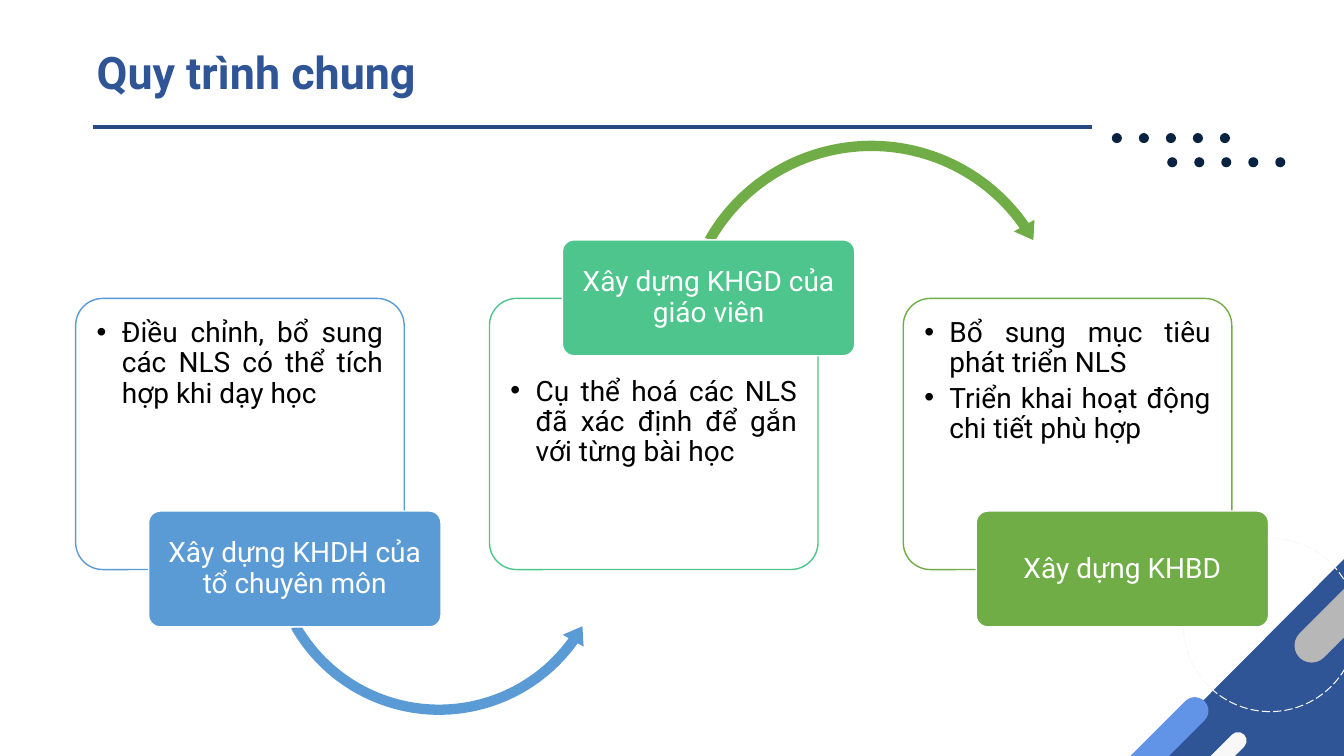
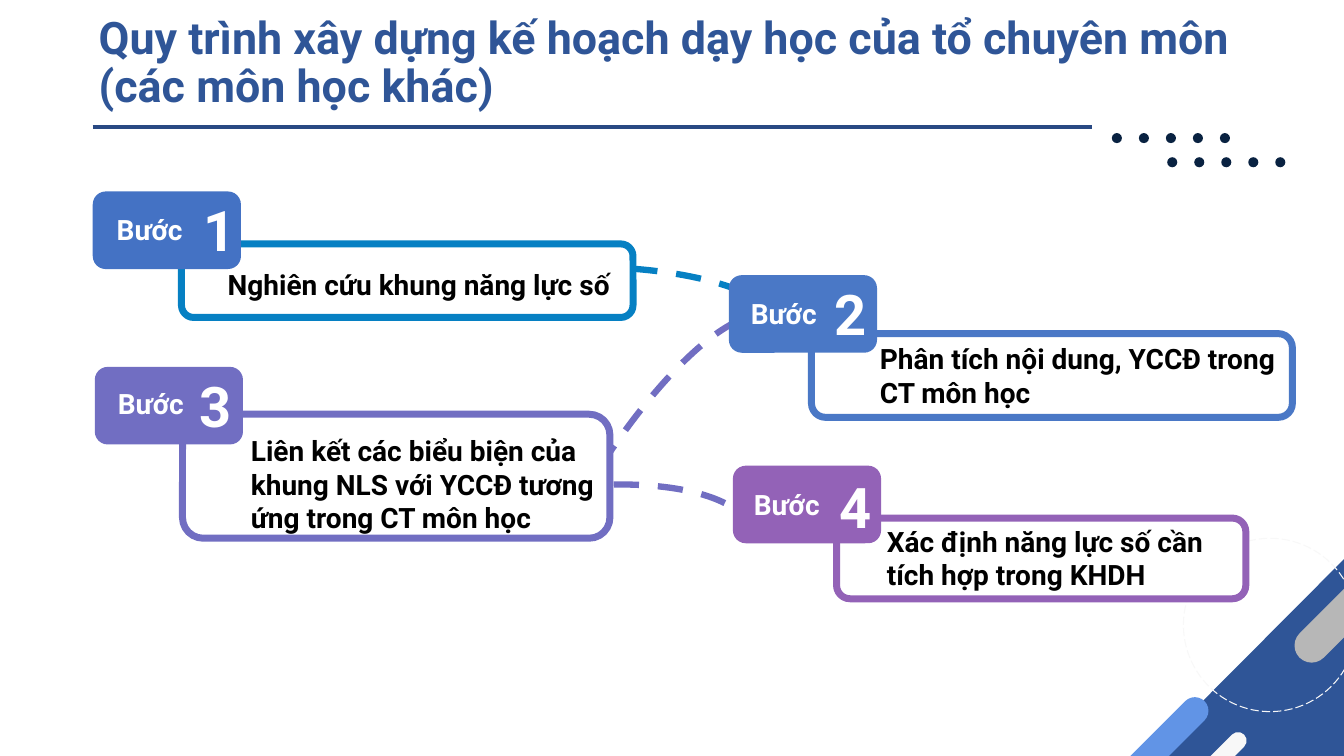
from pptx import Presentation
from pptx.dml.color import RGBColor
from pptx.enum.dml import MSO_LINE
from pptx.enum.shapes import MSO_CONNECTOR, MSO_SHAPE
from pptx.enum.text import MSO_ANCHOR, PP_ALIGN
from pptx.oxml.ns import qn
from pptx.util import Inches, Pt
from lxml import etree

ROUND, OVAL, ARC = MSO_SHAPE.ROUNDED_RECTANGLE, MSO_SHAPE.OVAL, MSO_SHAPE.ARC
TRIANGLE = MSO_SHAPE.RIGHT_TRIANGLE
ARROW_UNDER, ARROW_OVER = MSO_SHAPE.LEFT_CIRCULAR_ARROW, MSO_SHAPE.CIRCULAR_ARROW
DASH, LONG_DASH = MSO_LINE.DASH, MSO_LINE.LONG_DASH
TOP, MIDDLE = MSO_ANCHOR.TOP, MSO_ANCHOR.MIDDLE
LEFT, CENTER, JUSTIFY = PP_ALIGN.LEFT, PP_ALIGN.CENTER, PP_ALIGN.JUSTIFY

FONT = "Roboto"
NAVY, RULE, DOT, OFF_WHITE = "2F5597", "294983", "092241", "F8F8F8"
WHITE, BLACK = "FFFFFF", "000000"
BLUE, MINT, GREEN = "5B9BD5", "4DC58D", "70AD47"
CYAN, ROYAL, INDIGO, PURPLE = "0680C3", "4A78C6", "716EC2", "9362B7"

deck = Presentation()
deck.slide_width, deck.slide_height = Inches(13.333), Inches(7.5)
# Grid of 100 columns and 100 rows; every box is (column, row, columns, rows)
COL, ROW = deck.slide_width / 100, deck.slide_height / 100


def draw(slide, kind, box, fill=None, line=None, width=1, dash=None, turn=0, adjust=()):
    """Place a preset shape, or a text box when kind is None."""
    x, y, w, h = box
    area = [round(n) for n in (x * COL, y * ROW, w * COL, h * ROW)]
    if kind is None:
        return slide.shapes.add_textbox(*area)
    shape = slide.shapes.add_shape(kind, *area)
    shape.shadow.inherit = False
    shape.rotation = turn
    for index, value in enumerate(adjust):
        shape.adjustments[index] = value
    if fill:
        shape.fill.solid()
        shape.fill.fore_color.rgb = RGBColor.from_string(fill)
    else:
        shape.fill.background()
    if line:
        shape.line.color.rgb = RGBColor.from_string(line)
        shape.line.width = Pt(width)
        shape.line.dash_style = dash
    else:
        shape.line.fill.background()
    return shape


def write(shape, lines, color, size=20, bold=False, align=LEFT, anchor=TOP,
          spacing=1.0, after=0, bullet=False, wrap=True, margins=(0.1, 0.05, 0.1, 0.05)):
    """Fill a shape with paragraphs; margins are left, top, right, bottom in inches."""
    frame = shape.text_frame
    frame.word_wrap, frame.vertical_anchor = wrap, anchor
    for side, margin in zip(("left", "top", "right", "bottom"), margins):
        setattr(frame, f"margin_{side}", Inches(margin))
    frame.text = "\n".join(lines)
    font_format = {"name": FONT, "size": Pt(size), "bold": bold}
    paragraph_format = {"alignment": align, "line_spacing": spacing, "space_after": Pt(after)}
    for paragraph in frame.paragraphs:
        for key, value in paragraph_format.items():
            setattr(paragraph, key, value)
        if bullet:
            props = paragraph._p.get_or_add_pPr()
            props.set("marL", str(Inches(0.25)))
            props.set("indent", str(-Inches(0.25)))
            etree.SubElement(props, qn("a:buFont")).set("typeface", "Arial")
            etree.SubElement(props, qn("a:buChar")).set("char", "•")
        for run in paragraph.runs:
            for key, value in font_format.items():
                setattr(run.font, key, value)
            run.font.color.rgb = RGBColor.from_string(color)


# Shared frame: corner ornament, dots, rule and title
corner = [
    dict(kind=TRIANGLE, box=(84.9, 73.73, 15.3, 27.07), fill=NAVY, turn=270),
    dict(kind=ROUND, box=(95.03, 77.6, 11.33, 4.53), fill="B7B7B7", turn=135, adjust=[0.5]),
    dict(kind=OVAL, box=(88.05, 71.2, 12.9, 22.93), line=OFF_WHITE, width=0.75,
         dash=LONG_DASH, turn=180),
    dict(kind=ROUND, box=(80.4, 97.73, 10.8, 3.6), fill="6194E6", turn=135, adjust=[0.5]),
    dict(kind=ROUND, box=(86.1, 100.8, 7.58, 2.27), fill=OFF_WHITE, turn=135, adjust=[0.5]),
]
titles = [
    ("Quy trình chung", (6.45, 0.27, 86.25, 19.33)),
    ("Quy trình xây dựng kế hoạch dạy học của tổ chuyên môn (các môn học khác)",
     (6.6, -1.2, 88.8, 19.33)),
]
slides = []
for title, title_box in titles:
    slide = deck.slides.add_slide(deck.slide_layouts[6])
    slides.append(slide)
    for ornament in corner:
        draw(slide, **ornament)
    for dots_left, dots_top in ((82.73, 17.6), (86.85, 20.8)):
        for i in range(5):
            draw(slide, OVAL, (dots_left + 2.01 * i, dots_top, 0.75, 1.33), DOT)
    rule_y = round(16.8 * ROW)
    rule = slide.shapes.add_connector(MSO_CONNECTOR.STRAIGHT, round(6.9 * COL), rule_y,
                                      round(81.23 * COL), rule_y)
    rule.line.color.rgb = RGBColor.from_string(RULE)
    rule.line.width = Pt(2.25)
    etree.SubElement(rule._element.spPr, qn("a:effectLst"))
    write(draw(slide, None, title_box), [title], NAVY, size=32, bold=True,
          anchor=MIDDLE, spacing=0.9)

overview, subject_plan = slides

# Slide 1: three stages joined by circular arrows
LABEL_LOW, LABEL_HIGH = 67.6, 31.73
stages = [
    ("Xây dựng KHDH của tổ chuyên môn", BLUE, LABEL_LOW,
     ["Điều chỉnh, bổ sung các NLS có thể tích hợp khi dạy học"],
     dict(kind=ARROW_UNDER, box=(19.5, 48.67, 26.33, 46.8), fill=BLUE,
          adjust=[0.029, 3.573, 21.328, 90.245, 0.034])),
    ("Xây dựng KHGD của giáo viên", MINT, LABEL_HIGH,
     ["Cụ thể hoá các NLS đã xác định để gắn với từng bài học"],
     dict(kind=ARROW_OVER, box=(50.1, 17.73, 29.48, 52.4), fill=GREEN,
          adjust=[0.026, 3.171, 195.074, 125.755, 0.03])),
    ("Xây dựng KHBD", GREEN, LABEL_LOW,
     ["Bổ sung mục tiêu phát triển NLS", "Triển khai hoạt động chi tiết phù hợp"],
     None),
]
for i, (label, color, label_top, tasks, arrow) in enumerate(stages):
    left = 5.63 + 30.79 * i
    card = draw(overview, ROUND, (left, 39.47, 24.45, 35.87), WHITE, color, adjust=[0.1])
    top_margin = 0.7 if label_top == LABEL_HIGH else 0.12
    write(card, tasks, BLACK, align=JUSTIFY, spacing=0.9, after=3.5, bullet=True,
          margins=(0.13, top_margin, 0.13, 0.13))
    if arrow:
        draw(overview, **arrow)
    stage_label = draw(overview, ROUND, (left + 5.43, label_top, 21.75, 15.33), color, WHITE,
                       adjust=[0.1])
    write(stage_label, [label], WHITE, align=CENTER, anchor=MIDDLE, spacing=0.9,
          margins=(0.04, 0.03, 0.04, 0.03))

# Slide 2: dashed paths behind four numbered steps
paths = [
    ((24.08, 65.07, 32.25, 21.47), 349.8, INDIGO),
    ((28.65, 61.6, 38.55, 20.4), 300, INDIGO),
    ((29.4, 35.33, 28.73, 16.4), 0, CYAN),
]
for path_box, turn, color in paths:
    draw(subject_plan, ARC, path_box, line=color, width=4.5, dash=DASH, turn=turn)

# Each step: text lines, border, badge colour, panel, text box, then badge, word and number corners
steps = [
    (["Nghiên cứu khung năng lực số"], CYAN, "4472C4",
     (13.5, 32.27, 33.6, 9.73), (16.2, 34.67, 30.9, 5.87),
     (6.9, 25.33), (7.05, 27.47), (14.4, 25.2)),
    (["Phân tích nội dung, YCCĐ trong", "CT môn học"], ROYAL, ROYAL,
     (60.38, 44.13, 35.78, 11.07), (64.73, 44.53, 32.78, 10.27),
     (54.23, 36.4), (54.23, 38.53), (61.35, 36.27)),
    (["Liên kết các biểu biện của khung NLS với YCCĐ tương ứng trong CT môn học"], INDIGO, INDIGO,
     (13.58, 54.8, 31.8, 16.4), (17.93, 56.67, 27.53, 14.8),
     (7.05, 48.53), (7.13, 50.53), (14.1, 48.53)),
    (["Xác định năng lực số cần tích hợp trong KHDH"], PURPLE, PURPLE,
     (62.25, 68.53, 30.45, 10.67), (65.25, 68.67, 27.45, 10.27),
     (54.53, 61.6), (54.45, 63.87), (61.73, 61.87)),
]
for number, step in enumerate(steps, start=1):
    lines, border, badge_fill, panel, text_box, badge, word, digit = step
    draw(subject_plan, ROUND, panel, WHITE, border, width=5)
    draw(subject_plan, ROUND, (*badge, 11.03, 10.27), badge_fill)
    write(draw(subject_plan, None, text_box), lines, BLACK, bold=True)
    write(draw(subject_plan, None, (*word, 8.18, 5.87)), ["Bước"], WHITE, bold=True,
          align=CENTER)
    write(draw(subject_plan, None, (*digit, 3.9, 10.27)), [str(number)], WHITE, size=40,
          bold=True, align=CENTER, wrap=False)

deck.save("out.pptx")
